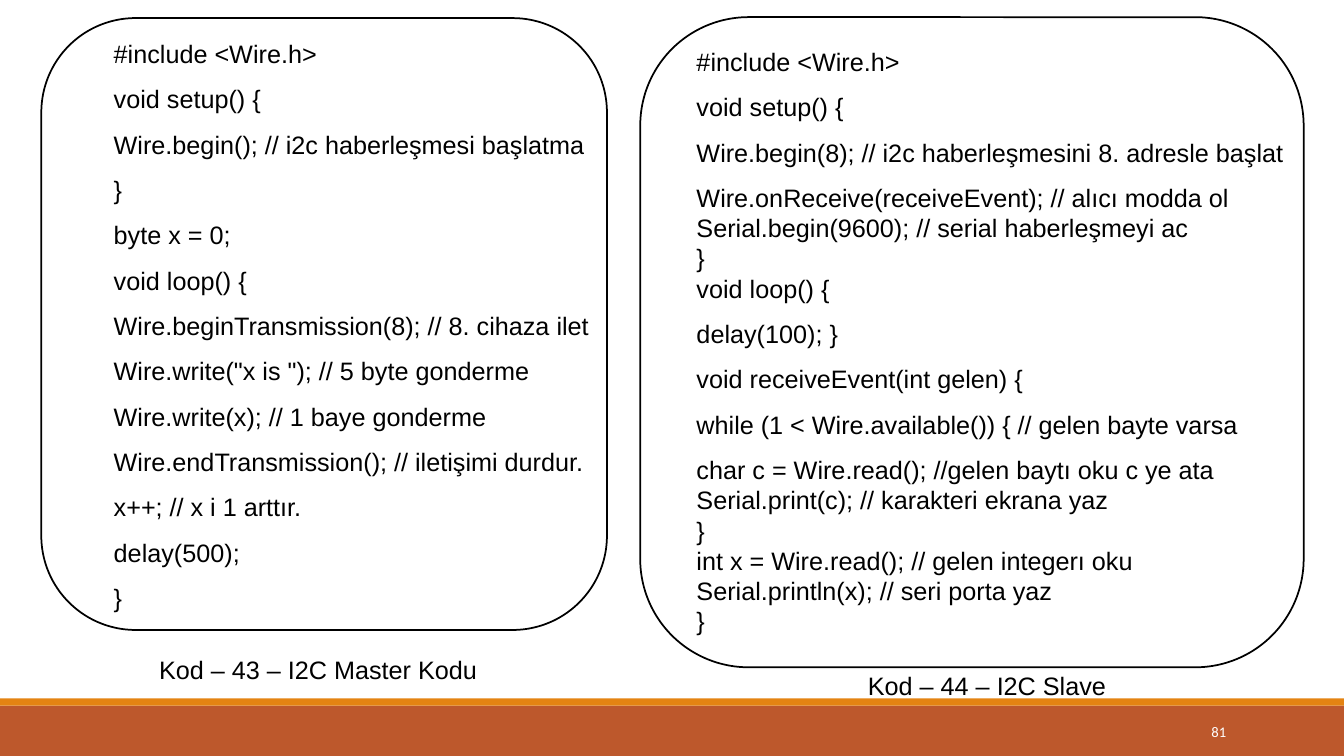
from dataclasses import dataclass

from pptx import Presentation
from pptx import util as u
from pptx.dml.color import RGBColor
from pptx.enum import shapes, text

COLORS = {
    "ink": "000000",
    "paper": "FFFFFF",
    "footer": "BD582C",
    "accent": "E48312",
}
WIDE, SINGLE = 1.5, 1.0


@dataclass(frozen=True)
class Box:
    left: float
    top: float
    width: float
    height: float

    def lengths(self) -> list[u.Length]:
        return [u.Inches(n) for n in (self.left, self.top, self.width, self.height)]


@dataclass(frozen=True)
class CodeBlock:
    spacing: float
    code: str


@dataclass(frozen=True)
class Listing:
    frame: Box
    code_box: Box
    caption_box: Box
    caption: str
    blocks: tuple[CodeBlock, ...]


MASTER = Listing(
    frame=Box(0.41, 0.18, 5.61, 6.07),
    code_box=Box(1.03, 0.18, 6.67, 5.96),
    caption_box=Box(1.48, 6.44, 3.46, 0.4),
    caption="Kod – 43 – I2C Master Kodu",
    blocks=(
        CodeBlock(WIDE, """#include <Wire.h>
void setup() {
Wire.begin(); // i2c haberleşmesi başlatma
}
byte x = 0;
void loop() {
Wire.beginTransmission(8); // 8. cihaza ilet
Wire.write("x is "); // 5 byte gonderme
Wire.write(x); // 1 baye gonderme
Wire.endTransmission(); // iletişimi durdur.
x++; // x i 1 arttır.
delay(500);
}"""),
    ),
)

SLAVE = Listing(
    frame=Box(6.35, 0.17, 6.58, 6.45),
    code_box=Box(6.81, 0.26, 6.67, 6.16),
    caption_box=Box(8.51, 6.6, 2.66, 0.4),
    caption="Kod – 44 – I2C Slave",
    blocks=(
        CodeBlock(WIDE, """#include <Wire.h>
void setup() {
Wire.begin(8); // i2c haberleşmesini 8. adresle başlat
Wire.onReceive(receiveEvent); // alıcı modda ol"""),
        CodeBlock(SINGLE, """Serial.begin(9600); // serial haberleşmeyi ac
}
void loop() {"""),
        CodeBlock(WIDE, """delay(100); }
void receiveEvent(int gelen) {
while (1 < Wire.available()) { // gelen bayte varsa
char c = Wire.read(); //gelen baytı oku c ye ata"""),
        CodeBlock(SINGLE, """Serial.print(c); // karakteri ekrana yaz
}
int x = Wire.read(); // gelen integerı oku
Serial.println(x); // seri porta yaz
}"""),
    ),
)


def rgb(name: str) -> RGBColor:
    return RGBColor.from_string(COLORS[name])


def add_band(slide, box: Box, color: str) -> None:
    band = slide.shapes.add_shape(shapes.MSO_SHAPE.RECTANGLE, *box.lengths())
    band.shadow.inherit = False
    band.fill.solid()
    band.fill.fore_color.rgb = rgb(color)
    band.line.fill.background()


def add_frame(slide, box: Box) -> None:
    frame = slide.shapes.add_shape(shapes.MSO_SHAPE.ROUNDED_RECTANGLE, *box.lengths())
    frame.shadow.inherit = False
    frame.fill.background()
    frame.line.color.rgb = rgb("ink")
    frame.line.width = u.Pt(1.25)


def add_text(slide, box: Box, blocks: tuple[CodeBlock, ...], *, size: float = 18,
             font: str = "Arial", color: str = "ink", wrap: bool = True,
             align=text.PP_ALIGN.LEFT, anchor=text.MSO_ANCHOR.TOP) -> None:
    """Write each line of the blocks as a paragraph with its block's spacing."""
    frame = slide.shapes.add_textbox(*box.lengths()).text_frame
    frame.word_wrap = wrap
    frame.vertical_anchor = anchor
    lines = [(block.spacing, line) for block in blocks for line in block.code.split("\n")]
    for index, (spacing, line) in enumerate(lines):
        paragraph = frame.add_paragraph() if index else frame.paragraphs[0]
        paragraph.alignment = align
        paragraph.line_spacing = spacing
        run = paragraph.add_run()
        run.text = line
        run.font.size = u.Pt(size)
        run.font.name = font
        run.font.color.rgb = rgb(color)


def add_listing(slide, listing: Listing) -> None:
    add_text(slide, listing.code_box, listing.blocks)
    add_frame(slide, listing.frame)
    add_text(slide, listing.caption_box, (CodeBlock(SINGLE, listing.caption),), wrap=False)


def main() -> None:
    deck = Presentation()
    deck.slide_width, deck.slide_height = u.Inches(13.33), u.Inches(7.5)
    blank_layout = deck.slide_layouts[6]
    slide = deck.slides.add_slide(blank_layout)
    slide.background.fill.solid()
    slide.background.fill.fore_color.rgb = rgb("paper")

    add_band(slide, Box(0, 7, 13.33, 0.5), "footer")
    add_band(slide, Box(0, 6.93, 13.33, 0.07), "accent")
    add_text(slide, Box(10.83, 7.06, 1.43, 0.4), (CodeBlock(SINGLE, "81"),),
             size=10.5, font="Calibri", color="paper",
             align=text.PP_ALIGN.RIGHT, anchor=text.MSO_ANCHOR.MIDDLE)
    for listing in (MASTER, SLAVE):
        add_listing(slide, listing)

    deck.save("out.pptx")


if __name__ == "__main__":
    main()
